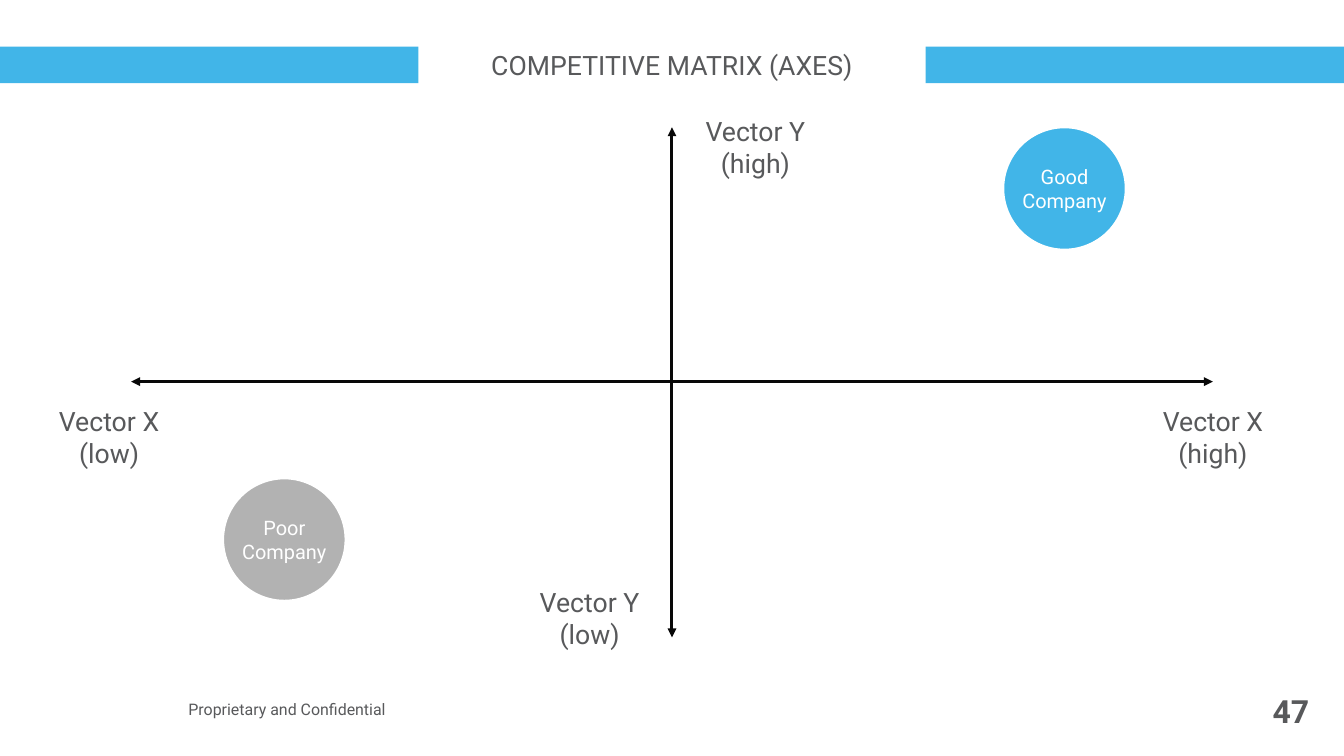
"""Build a competitive matrix slide with two axes and two company bubbles."""
from lxml import etree
from pptx import Presentation
from pptx.dml.color import RGBColor
from pptx.enum.shapes import MSO_CONNECTOR, MSO_SHAPE
from pptx.enum.text import MSO_ANCHOR, MSO_AUTO_SIZE, PP_ALIGN
from pptx.oxml.ns import qn
from pptx.util import Cm, Pt

LEFT, CENTER, RIGHT = PP_ALIGN.LEFT, PP_ALIGN.CENTER, PP_ALIGN.RIGHT
MIDDLE = MSO_ANCHOR.MIDDLE
NO_AUTOFIT = MSO_AUTO_SIZE.NONE
RECT, OVAL = MSO_SHAPE.RECTANGLE, MSO_SHAPE.OVAL
STRAIGHT = MSO_CONNECTOR.STRAIGHT

COLORS = {"blue": "41B5E8", "grey": "B2B2B2", "text": "58595B",
          "axis": "080808", "white": "FFFFFF"}
FONT = "Roboto"
WIDTH, HEIGHT = 35.66, 20.07
LABEL_SIZE = (3.71, 2.21)
BUBBLE = 3.25

TITLE = "COMPETITIVE MATRIX (AXES)"
TITLE_BOX = (11.1, 1.04, 13.46, 1.37)
BAND_BOX = (0, 1.24, WIDTH, 0.97)
FOOTER = ("Proprietary and Confidential", (4.9, 18.01, 8.86, 1.65))
PAGE = ("47", (33.22, 18.34, 1.52, 1.04))
AXES = [(WIDTH / 2, 3.38, WIDTH / 2, 16.92), (3.48, 10.13, 32.18, 10.13)]
LABELS = [
    ("Vector X (low)", 1.04, 10.49),
    ("Vector X (high)", 30.33, 10.49),
    ("Vector Y (low)", 13.79, 15.29),
    ("Vector Y (high)", 18.19, 2.79),
]
BUBBLES = [
    ("Good Company", 26.62, 3.38, "blue"),
    ("Poor\vCompany", 5.92, 12.7, "grey"),
]


def rgb(name):
    return RGBColor.from_string(COLORS[name])


def cm(values):
    return [Cm(v) for v in values]


def write(sp, text, size=20, color="text", bold=False, align=CENTER, inset=0.1, wrap=True):
    tf = sp.text_frame
    tf.auto_size = NO_AUTOFIT
    tf.word_wrap = wrap
    tf.vertical_anchor = MIDDLE
    tf.margin_left = tf.margin_right = tf.margin_top = tf.margin_bottom = Cm(inset)
    p = tf.paragraphs[0]
    p.text = text
    p.alignment = align
    for r in p.runs:
        r.font.name = FONT
        r.font.size = Pt(size)
        r.font.bold = bold
        r.font.color.rgb = rgb(color)


def add_filled(s, kind, box, fill, line=None):
    sp = s.shapes.add_shape(kind, *cm(box))
    sp.shadow.inherit = False
    sp.fill.solid()
    sp.fill.fore_color.rgb = rgb(fill)
    if line:
        sp.line.color.rgb = rgb(line)
        sp.line.width = Pt(1.5)
    else:
        sp.line.fill.background()
    return sp


def add_axis(s, ends):
    axis = s.shapes.add_connector(STRAIGHT, *cm(ends))
    axis.line.color.rgb = rgb("axis")
    axis.line.width = Pt(2.25)
    ln = axis.line._get_or_add_ln()
    for end in ("a:headEnd", "a:tailEnd"):
        etree.SubElement(ln, qn(end), type="triangle")
    etree.SubElement(axis._element.spPr, qn("a:effectLst"))


def add_title(s):
    title = s.shapes.title
    title.left, title.top, title.width, title.height = cm(TITLE_BOX)
    title.fill.solid()
    title.fill.fore_color.rgb = rgb("white")
    write(title, TITLE, inset=0.25)
    band = add_filled(s, RECT, BAND_BOX, "blue")
    title._element.addprevious(band._element)


def main():
    prs = Presentation()
    prs.slide_width, prs.slide_height = cm((WIDTH, HEIGHT))
    s = prs.slides.add_slide(prs.slide_layouts.get_by_name("Title Only"))
    add_title(s)

    text, box = PAGE
    write(s.shapes.add_textbox(*cm(box)), text, size=24, bold=True, align=RIGHT,
          inset=0, wrap=False)
    text, box = FOOTER
    write(s.shapes.add_textbox(*cm(box)), text, size=12, align=LEFT)

    for ends in AXES:
        add_axis(s, ends)
    for text, x, y in LABELS:
        write(s.shapes.add_textbox(*cm((x, y, *LABEL_SIZE))), text)
    for text, x, y, fill in BUBBLES:
        sp = add_filled(s, OVAL, (x, y, BUBBLE, BUBBLE), fill, line="white")
        write(sp, text, size=15, color="white", inset=0)

    prs.save("out.pptx")


if __name__ == "__main__":
    main()
